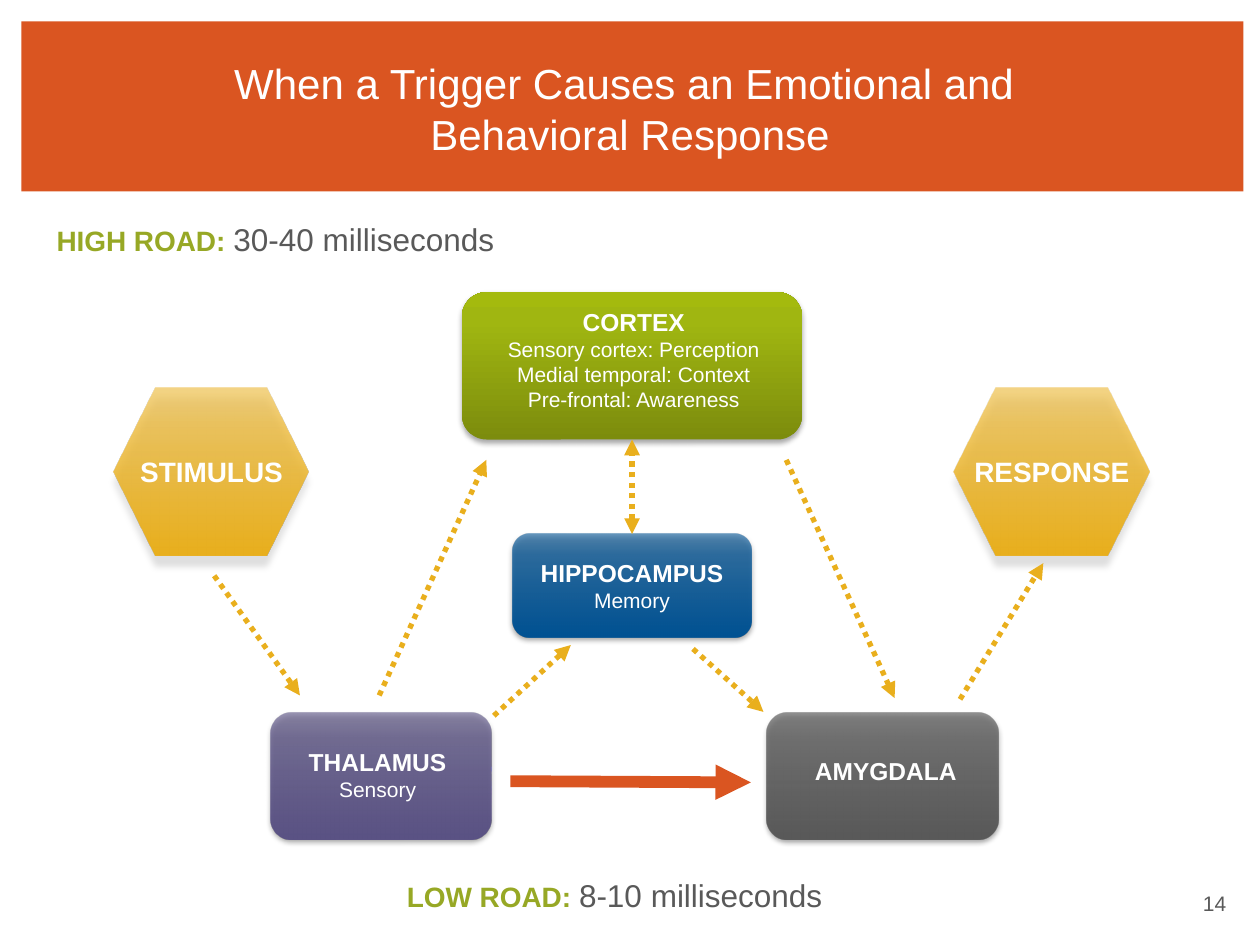
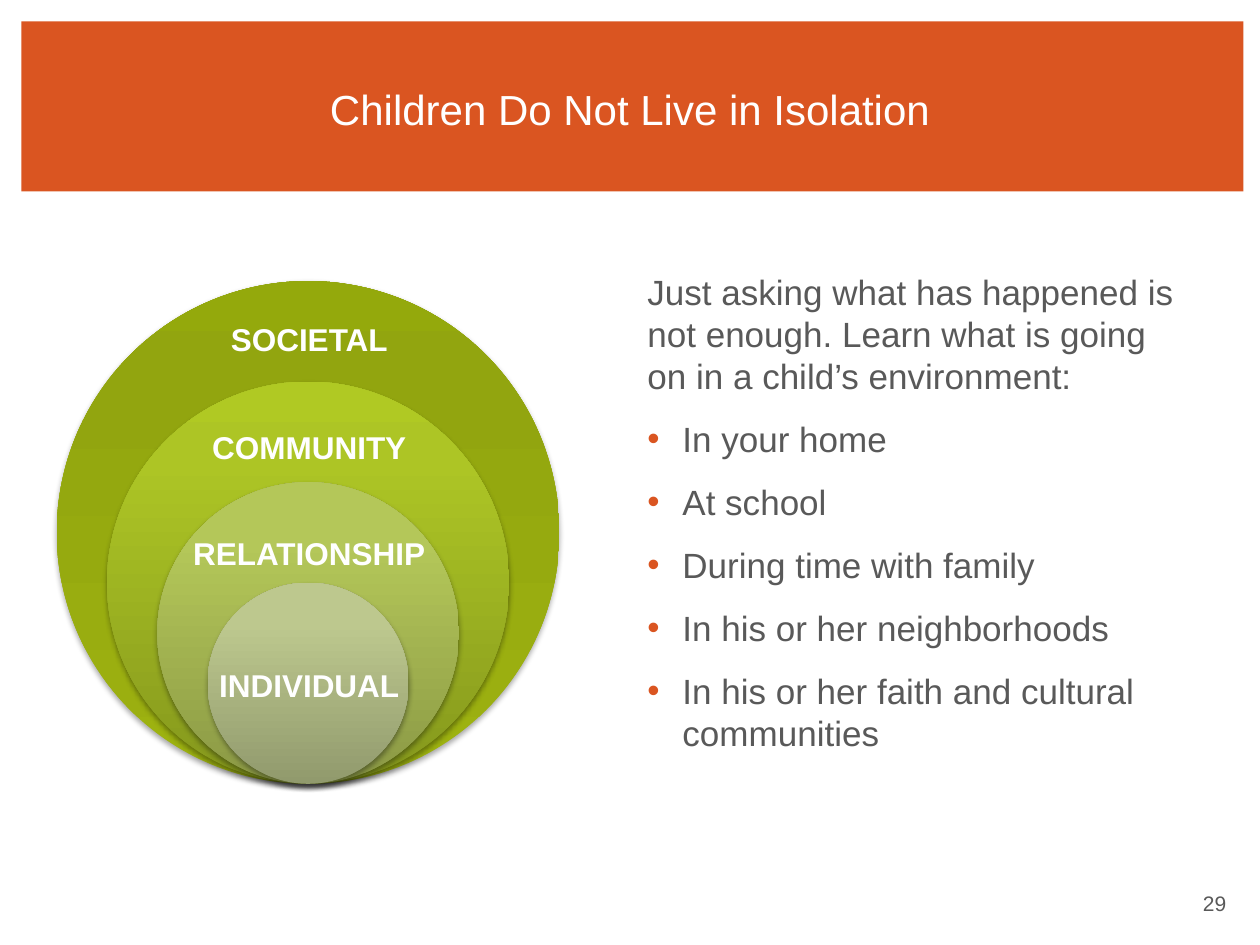
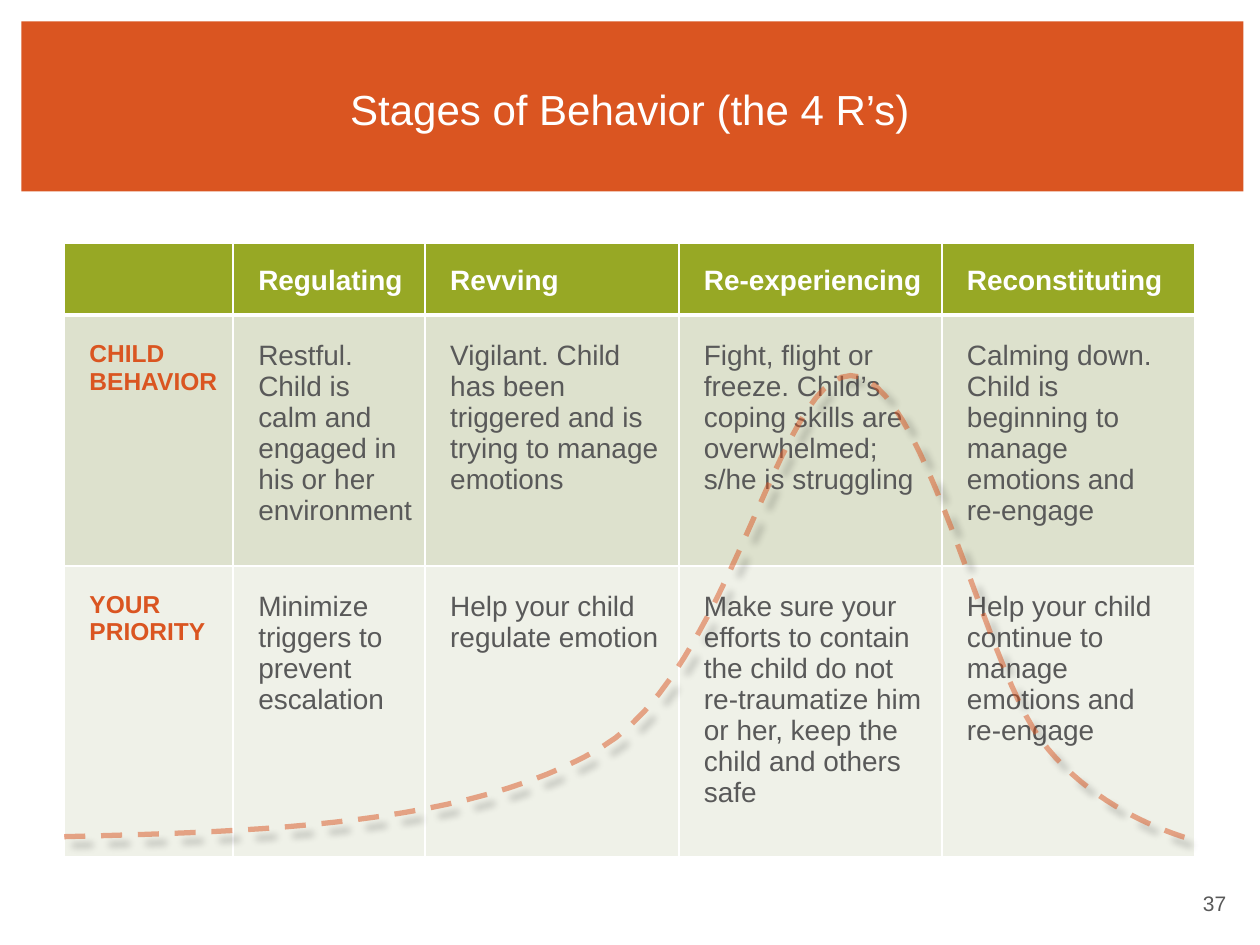
from dataclasses import dataclass

from lxml.etree import SubElement
from pptx import Presentation
from pptx.dml.color import RGBColor
from pptx.enum.dml import MSO_LINE
from pptx.enum.shapes import MSO_CONNECTOR, MSO_SHAPE
from pptx.enum.text import MSO_ANCHOR, PP_ALIGN
from pptx.oxml.ns import qn
from pptx.util import Pt

FONT = "Arial"
COLORS = {
    "orange": "DA5521", "green": "97A825", "gold": "E9AF1D",
    "blue": "005293", "gray": "595959", "purple": "5A5284",
    "white": "FFFFFF", "black": "000000",
    "behavior_row": "DDE1CD", "priority_row": "EFF1E8",
    "cortex_bottom": "7C8C0D", "cortex_upper": "A0B611", "cortex_top": "A4BA0E",
    "societal_bottom": "9DB210", "societal_upper": "92A50F", "societal_top": "94A90C",
    "community_bottom": "85981D", "community_upper": "ADC525", "community_top": "B0C923",
    "relationship_bottom": "8B9945", "relationship_upper": "B4C759", "relationship_top": "B6CA58",
    "individual_bottom": "919A6D", "individual_upper": "BDC88E", "individual_top": "BECA8E",
}
SOFT_SHADOW = (35, 3.1, 1.8, 90)
HEXAGON_SHADOW = (12, 4, 6, 90)
CURVE_SHADOW = (40, 4, 6, 45)


@dataclass
class Box:
    """A rectangle in points."""
    left: float
    top: float
    width: float
    height: float

    def inner(self, dx, dy, width, height):
        """Return a box placed relative to this one."""
        return Box(self.left + dx, self.top + dy, width, height)

    def lengths(self):
        """Return left, top, width and height as lengths."""
        return [Pt(value) for value in (self.left, self.top, self.width, self.height)]


BAND = Box(12.2, 12.2, 698.4, 97.2)
TITLE = Box(36, 21.6, 648, 80.6)
PAGE_NUMBER = Box(540, 505.4, 167.8, 23)


def rgb(name):
    """Look up a named colour."""
    return RGBColor.from_string(COLORS[name])


def style_runs(paragraph, size, color, bold=False):
    """Format every run of a paragraph."""
    for run in paragraph.runs:
        run.font.name = FONT
        run.font.size = Pt(size)
        run.font.bold = bold
        run.font.color.rgb = rgb(color)


def add_text(slide, box, lines, align=PP_ALIGN.CENTER, anchor=MSO_ANCHOR.TOP):
    """Add wrapped text; each line is (text, size, colour, bold)."""
    frame = slide.shapes.add_textbox(*box.lengths()).text_frame
    frame.word_wrap = True
    frame.vertical_anchor = anchor
    frame.text = "\n".join(line[0] for line in lines)
    for paragraph, (_, size, color, bold) in zip(frame.paragraphs, lines):
        paragraph.alignment = align
        style_runs(paragraph, size, color, bold)
    return frame


def add_shape(slide, preset, box):
    """Add a preset shape without line or shadow."""
    shape = slide.shapes.add_shape(preset, *box.lengths())
    shape.shadow.inherit = False
    shape.line.fill.background()
    return shape


def add_color(parent, name, opacity=100):
    """Append a colour element with its opacity in percent."""
    color = SubElement(parent, qn("a:srgbClr"), val=COLORS[name])
    if opacity < 100:
        SubElement(color, qn("a:alpha"), val=str(opacity * 1000))


def add_shadow(shape, opacity, blur, distance, angle):
    """Give a shape an outer black shadow."""
    shape.shadow.inherit = False
    effects = shape._element.spPr.find(qn("a:effectLst"))
    shadow = SubElement(effects, qn("a:outerShdw"), blurRad=str(Pt(blur)),
                        dist=str(Pt(distance)), dir=str(angle * 60000), rotWithShape="0")
    add_color(shadow, "black", opacity)


def fill_gradient(shape, stops):
    """Fill upwards with (position, colour, opacity) stops."""
    shape.fill.gradient()
    shape.fill.gradient_angle = 90
    stop_list = shape._element.spPr.find(".//" + qn("a:gsLst"))
    for stop in list(stop_list):
        stop_list.remove(stop)
    for position, color, opacity in stops:
        stop = SubElement(stop_list, qn("a:gs"), pos=str(position * 1000))
        add_color(stop, color, opacity)


def fading(color, upper, top):
    """Return stops that fade one colour towards the top."""
    return [(0, color, 100), (80, color, upper), (100, color, top)]


def shaded(name):
    """Return the three opaque stops named after a region."""
    return [(position, f"{name}_{level}", 100)
            for position, level in ((0, "bottom"), (80, "upper"), (100, "top"))]


def add_arrow(slide, start, end, color="gold", width=3, dash=MSO_LINE.ROUND_DOT, both=False):
    """Draw an arrow between two points."""
    arrow = slide.shapes.add_connector(
        MSO_CONNECTOR.STRAIGHT, *[Pt(value) for value in (*start, *end)])
    arrow.line.color.rgb = rgb(color)
    arrow.line.width = Pt(width)
    if dash:
        arrow.line.dash_style = dash
    line = arrow.line._get_or_add_ln()
    if both:
        SubElement(line, qn("a:headEnd"), type="triangle")
    SubElement(line, qn("a:tailEnd"), type="triangle")
    SubElement(arrow._element.spPr, qn("a:effectLst"))
    return arrow


def start_slide(deck, title, number):
    """Add a slide with its band, title and page number."""
    slide = deck.slides.add_slide(deck.slide_layouts[6])
    band = add_shape(slide, MSO_SHAPE.RECTANGLE, BAND)
    band.fill.solid()
    band.fill.fore_color.rgb = rgb("orange")
    add_text(slide, TITLE, [(title, 24, "white", False)], anchor=MSO_ANCHOR.MIDDLE)
    add_text(slide, PAGE_NUMBER, [(number, 12, "gray", False)], PP_ALIGN.RIGHT)
    return slide


def add_road(slide, box, name, duration):
    """Add a road's name followed by its duration."""
    paragraph = add_text(slide, box, [(name, 16, "green", True)], PP_ALIGN.LEFT).paragraphs[0]
    time = paragraph.add_run()
    time.text = duration
    time.font.name = FONT
    time.font.size = Pt(18)
    time.font.color.rgb = rgb("gray")


def add_node(slide, box, preset, stops, shadow, lines, shift, drop):
    """Add a diagram node with its label moved by shift and drop."""
    node = add_shape(slide, preset, box)
    fill_gradient(node, stops)
    add_shadow(node, *shadow)
    add_text(slide, box.inner(shift, drop, box.width, box.height - drop), lines)
    return node


def add_brain_diagram(slide, box):
    """Draw the routes from stimulus to response."""
    def region(place, stops, name, details, shift, drop):
        lines = [(name, 14, "white", True)] + [(text, 12, "white", False) for text in details]
        return add_node(slide, box.inner(*place), MSO_SHAPE.ROUNDED_RECTANGLE, stops,
                        SOFT_SHADOW, lines, shift, drop)

    for dx, name in ((0, "STIMULUS"), (480.2, "RESPONSE")):
        add_node(slide, box.inner(dx, 54.8, 111.6, 95.8), MSO_SHAPE.HEXAGON,
                 fading("gold", 67, 53), HEXAGON_SHADOW,
                 [(name, 16, "white", True)], 0.3, 34.6)
    hippocampus = region((228, 138.2, 136.8, 59), fading("blue", 76, 59),
                         "HIPPOCAMPUS", ["Memory"], 0, 10)
    cortex = region((199.2, 0, 194.4, 84.2), shaded("cortex"), "CORTEX",
                    ["Sensory cortex: Perception", "Medial temporal: Context",
                     "Pre-frontal: Awareness"], 1, 5)
    region((373.5, 240.5, 132.5, 72), fading("gray", 77, 65), "AMYGDALA", [], 1.7, 20.9)
    region((89.8, 240.5, 126, 72), fading("purple", 76, 60), "THALAMUS", ["Sensory"], -1.8, 15.8)

    memory_link = add_arrow(slide, (0, 0), (0, 0), both=True)
    memory_link.begin_connect(hippocampus, 0)
    memory_link.end_connect(cortex, 2)

    def route(x1, y1, x2, y2, **look):
        add_arrow(slide, (box.left + x1, box.top + y1), (box.left + x2, box.top + y2), **look)

    for ends in ((151.9, 230.4, 213.1, 95.8), (217.4, 242, 261.4, 201.6),
                 (331.2, 203.8, 371.5, 239.8), (384.5, 95.8, 446.4, 231.9),
                 (57.6, 162, 106.6, 230.4), (483.8, 232.6, 531.4, 154.8)):
        route(*ends)
    route(226.8, 279.4, 364.3, 280.1, color="orange", width=6.75, dash=None)


def add_circles(slide, box):
    """Nest circles that share their lowest point and label each."""
    levels = [("societal", 18.7), ("community", 80.6),
              ("relationship", 141.1), ("individual", 216.7)]
    for index, (name, _) in enumerate(levels):
        size = box.width * (1 - index / 5)
        circle = add_shape(slide, MSO_SHAPE.OVAL,
                           box.inner((box.width - size) / 2, box.height - size, size, size))
        fill_gradient(circle, shaded(name))
        add_shadow(circle, *SOFT_SHADOW)
    for name, drop in levels:
        add_text(slide, box.inner((box.width - 160) / 2 + 0.7, drop, 160, 28.8),
                 [(name.upper(), 18, "white", True)])


def add_environment_list(slide, box):
    """Write the introduction and the bulleted places."""
    texts = ["Just asking what has happened is not enough. "
             "Learn what is going on in a child’s environment:",
             "In your home", "At school", "During time with family",
             "In his or her neighborhoods", "In his or her faith and cultural communities"]
    frame = add_text(slide, box, [(text, 20, "gray", False) for text in texts], PP_ALIGN.LEFT)
    for paragraph in frame.paragraphs:
        paragraph.space_before = Pt(12)
    for paragraph in frame.paragraphs[1:]:
        properties = paragraph._p.get_or_add_pPr()
        properties.set("marL", str(Pt(20)))
        properties.set("indent", str(-Pt(20)))
        add_color(SubElement(properties, qn("a:buClr")), "orange")
        SubElement(properties, qn("a:buFont"), typeface=FONT)
        SubElement(properties, qn("a:buChar"), char="•")


def style_cell(cell, fill, bottom_width, top_inset):
    """Set borders, fill and insets of a cell."""
    properties = cell._tc.get_or_add_tcPr()
    for side, width in (("lnL", 1), ("lnR", 1), ("lnT", 1), ("lnB", bottom_width)):
        line = SubElement(properties, qn(f"a:{side}"), w=str(Pt(width)))
        add_color(SubElement(line, qn("a:solidFill")), "white")
    cell.fill.solid()
    cell.fill.fore_color.rgb = rgb(fill)
    cell.margin_left, cell.margin_top = Pt(14.4), Pt(top_inset)
    cell.margin_right, cell.margin_bottom = Pt(7.2), Pt(3.6)


def add_stages_table(slide, box):
    """Tabulate the four stages."""
    rows = [
        ["", "Regulating", "Revving", "Re-experiencing", "Reconstituting"],
        ["CHILD\nBEHAVIOR",
         "Restful. Child is calm and engaged in his or her environment",
         "Vigilant. Child has been triggered and is trying to manage emotions",
         "Fight, flight or freeze. Child’s coping skills are overwhelmed; s/he is struggling",
         "Calming down. Child is beginning to manage emotions and \vre-engage"],
        ["YOUR PRIORITY",
         "Minimize triggers to prevent escalation",
         "Help your child regulate emotion",
         "Make sure your efforts to contain the child do not re-traumatize him or her, "
         "keep the child and others safe",
         "Help your child continue to manage emotions and \vre-engage"],
    ]
    fills = ["green", "behavior_row", "priority_row"]
    table = slide.shapes.add_table(len(rows), len(rows[0]), *box.lengths()).table
    table.horz_banding = False
    for column, width in zip(table.columns, (96.5, 109.7, 145, 150.3, 144.8)):
        column.width = Pt(width)
    for row, height in zip(table.rows, (41, 143.3, 166.3)):
        row.height = Pt(height)
    for r, texts in enumerate(rows):
        header = r == 0
        for c, text in enumerate(texts):
            cell = table.cell(r, c)
            style_cell(cell, fills[r], 3 if header else 1, 3.6 if header else 14.4)
            cell.text_frame.text = text
            for paragraph in cell.text_frame.paragraphs:
                if header:
                    paragraph.line_spacing = 1.5
                    paragraph.space_before = Pt(4)
                    style_runs(paragraph, 16, "white", True)
                elif c == 0:
                    style_runs(paragraph, 14, "orange", True)
                else:
                    style_runs(paragraph, 16, "gray")


def bezier(start, first, second, end, steps=24):
    """Return points along a cubic curve after its start."""
    def at(t):
        weights = ((1 - t) ** 3, 3 * t * (1 - t) ** 2, 3 * t ** 2 * (1 - t), t ** 3)
        return [sum(weight * value for weight, value in zip(weights, axis))
                for axis in zip(start, first, second, end)]
    return [at(step / steps) for step in range(1, steps + 1)]


def add_arousal_curve(slide, box):
    """Draw the dashed rise and fall across the stages."""
    start = (0, 263.5)
    bends = [((113.8, 260.6), (231.1, 257), (306, 213.1)),
             ((380.9, 169.2), (407.5, 0.7), (449.3, 0)),
             ((491, -0.7), (524.9, 163.4), (558, 208.1)),
             ((591.1, 252.7), (646.6, 265.7), (646.6, 265.7))]
    points = [start]
    for bend in bends:
        points += bezier(points[-1], *bend)
    (first, *rest) = [(Pt(box.left + x), Pt(box.top + y)) for x, y in points]
    outline = slide.shapes.build_freeform(*first)
    outline.add_line_segments(rest, close=False)
    curve = outline.convert_to_shape()
    curve.fill.background()
    curve.line.color.rgb = rgb("orange")
    curve.line.width = Pt(3)
    curve.line.dash_style = MSO_LINE.DASH
    stroke = curve.line._get_or_add_ln().find(".//" + qn("a:srgbClr"))
    SubElement(stroke, qn("a:alpha"), val="50000")
    add_shadow(curve, *CURVE_SHADOW)


def main():
    """Build and save the three slides."""
    deck = Presentation()
    deck.slide_width, deck.slide_height = Pt(720), Pt(540)

    trigger = start_slide(
        deck, "When a Trigger Causes an Emotional and \vBehavioral Response", "14")
    add_road(trigger, Box(25.2, 122.4, 342, 28.8), "HIGH ROAD: ", "30-40 milliseconds")
    add_brain_diagram(trigger, Box(64.8, 167, 591.8, 312.5))
    add_road(trigger, Box(225.4, 496.8, 268.6, 28.8), "LOW ROAD: ", "8-10 milliseconds")

    isolation = start_slide(deck, "Children Do Not Live in Isolation", "29")
    add_environment_list(isolation, Box(362.9, 151.2, 321.8, 306))
    add_circles(isolation, Box(32.4, 160.6, 287.3, 287.3))

    stages = start_slide(deck, "Stages of Behavior (the 4 R’s)", "37")
    add_stages_table(stages, Box(36.7, 139, 646.3, 350.6))
    add_arousal_curve(stages, Box(36.7, 214.6, 646.6, 266.4))

    deck.save("out.pptx")


if __name__ == "__main__":
    main()
